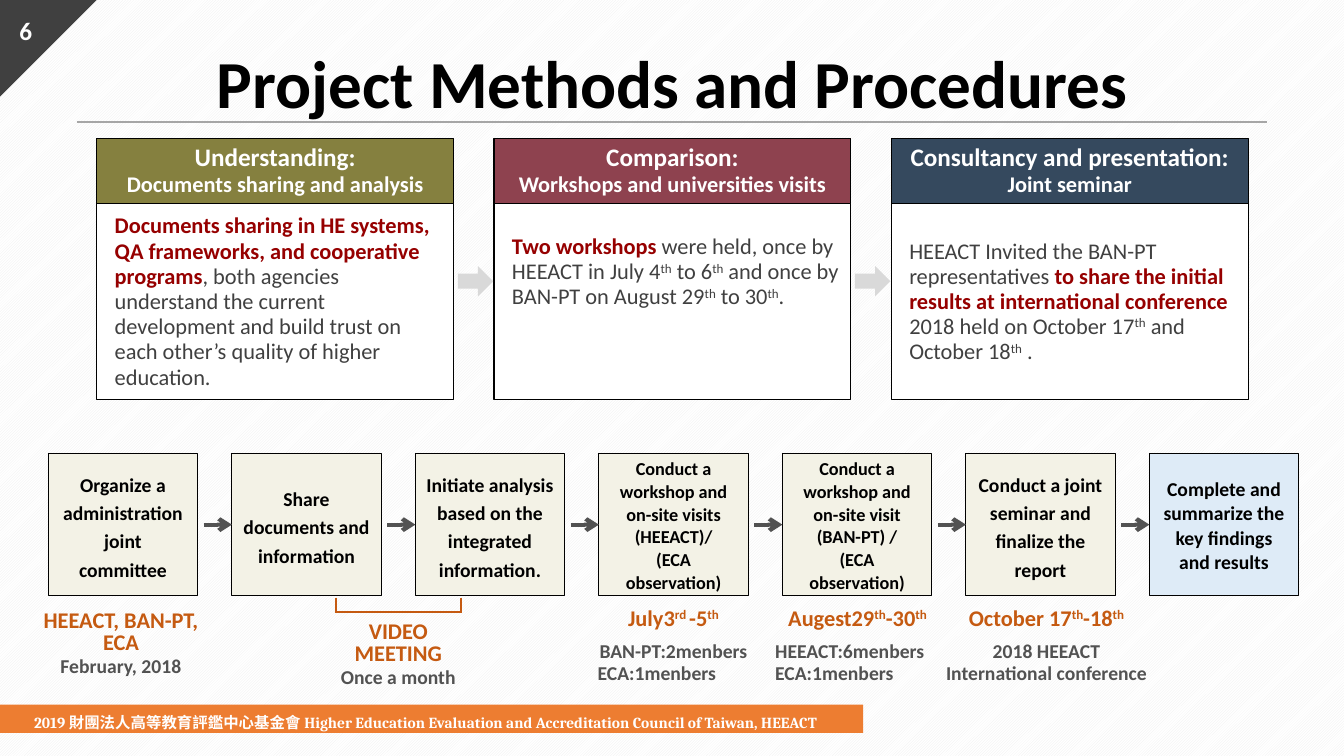
from lxml import etree
from pptx import Presentation
from pptx.dml.color import RGBColor as RGB
from pptx.enum.dml import MSO_PATTERN as PAT
from pptx.enum.shapes import MSO_CONNECTOR as CONN, MSO_SHAPE as SHAPE
from pptx.enum.text import MSO_ANCHOR as ANCHOR, PP_ALIGN as ALIGN
from pptx.oxml.ns import qn
from pptx.util import Inches, Pt

HUE = {
    "white": "FFFFFF", "black": "000000", "dark": "404040", "gray": "525252",
    "rule": "A6A6A6", "pale": "D9D9D9", "stripe": "EDEDED", "orange": "ED7D31",
    "rust": "C55A11", "red": "960000", "olive": "85803F", "wine": "8E424F",
    "navy": "35495E", "cream": "F3F2E6", "sky": "DEEBF7",
}


def box(kind, x, y, w, h, fill=None, edge=None):
    """Add a preset shape, or a text box when kind is None."""
    area = [Inches(v) for v in (x, y, w, h)]
    if kind is None:
        return slide.shapes.add_textbox(*area)
    shape = slide.shapes.add_shape(kind, *area)
    shape.shadow.inherit = False
    shape.fill.solid()
    shape.fill.fore_color.rgb = RGB.from_string(HUE[fill])
    if edge:
        shape.line.color.rgb = RGB.from_string(HUE[edge])
        shape.line.width = Pt(0.75)
    else:
        shape.line.fill.background()
    return shape


def write(shape, *paras, anchor=ANCHOR.MIDDLE, **look):
    """Write (text, format) pairs; *x* is strong red and ^x^ is raised."""
    frame = shape.text_frame
    frame.word_wrap = True
    frame.vertical_anchor = anchor
    for n, (text, own) in enumerate(paras):
        f = {"size": 16, "hue": "black", "bold": True, "font": "Calibri",
             "align": ALIGN.CENTER, **look, **own}
        para = frame.paragraphs[0] if n == 0 else frame.add_paragraph()
        para.alignment = f["align"]
        para.line_spacing = f.get("gap")
        para.space_before = Pt(f.get("before", 0))
        if "left" in f:
            para._p.get_or_add_pPr().set("marL", str(Inches(f["left"])))
        for i, part in enumerate(text.split("*")):
            for j, bit in enumerate(part.split("^")):
                if not bit:
                    continue
                run = para.add_run()
                run.text = bit
                run.font.name = f["font"]
                run.font.size = Pt(f["size"])
                run.font.bold = f["bold"] or i % 2 == 1
                run.font.color.rgb = RGB.from_string(HUE["red" if i % 2 else f["hue"]])
                props = run._r.get_or_add_rPr()
                if j % 2:
                    props.set("baseline", "30000")
                if "asian" in f:
                    etree.SubElement(props, qn("a:ea")).set("typeface", f["asian"])


deck = Presentation()
deck.slide_width, deck.slide_height = Inches(13.33), Inches(7.5)
slide = deck.slides.add_slide(deck.slide_layouts[5])

# Striped background
back = slide.background.fill
back.patterned()
back.pattern = PAT.LIGHT_UPWARD_DIAGONAL
back.fore_color.rgb = RGB.from_string(HUE["stripe"])
back.back_color.rgb = RGB.from_string(HUE["white"])

# Corner, page number and footer
box(SHAPE.RIGHT_TRIANGLE, 0, 0, 0.96, 0.96, "dark").rotation = 90
write(box(None, -0.02, 0.1, 0.55, 0.4), ("6", {}), size=18, hue="white")
box(SHAPE.RECTANGLE, -0.02, 6.99, 8.58, 0.28, "orange")
write(box(None, 0.24, 6.99, 8.23, 0.28),
      ("2019 財團法人高等教育評鑑中心基金會 Higher Education Evaluation "
       "and Accreditation Council of Taiwan, HEEACT", {}),
      size=11, hue="white", font="Cambria", asian="Noto Sans CJK SC",
      align=ALIGN.LEFT, gap=Pt(18))

# Title
title = slide.shapes.title
title.left, title.top = Inches(1.94), Inches(0.41)
title.width, title.height = Inches(9.46), Inches(0.81)
frame = title.text_frame
frame.margin_left = frame.margin_right = frame.margin_top = frame.margin_bottom = 0
write(title, ("Project Methods and Procedures", {}), size=48)

# Three phases
phases = [
    ("olive", "Understanding:", "Documents sharing and analysis",
     "*Documents sharing in HE systems, QA frameworks, and cooperative programs*, "
     "both agencies understand the current development and build trust on each "
     "other’s quality of higher education."),
    ("wine", "Comparison:", "Workshops and universities visits",
     "*Two workshops *were held, once by HEEACT in July 4^th^ to 6^th^ and once by "
     "BAN-PT on August 29^th^ to 30^th^."),
    ("navy", "Consultancy and presentation:", "Joint seminar",
     "HEEACT Invited the BAN-PT representatives *to share the initial results at "
     "international conference *2018 held on October 17^th^ and October 18^th^ ."),
]
for i, (hue, head, sub, body) in enumerate(phases):
    x = 0.96 + 3.94 * i
    write(box(SHAPE.RECTANGLE, x, 1.37, 3.54, 0.66, hue, "black"),
          (head, {"size": 18}), (sub, {}), hue="white", gap=Pt(18))
    card = box(SHAPE.RECTANGLE, x, 2.02, 3.54, 1.94, "white", "black")
    if hue == "wine":
        card.text_frame.margin_top = Inches(0.3)
    write(card, (body, {}), hue="dark", bold=False, align=ALIGN.LEFT, left=0.08,
          gap=Pt(18), anchor=ANCHOR.TOP if hue == "wine" else ANCHOR.MIDDLE)
    if i:
        box(SHAPE.RIGHT_ARROW, x - 0.36, 2.64, 0.35, 0.3, "pale")

# Seven steps: font size, line spacing, paragraphs
steps = [
    (14, 1.2, ["Organize a administration joint committee"]),
    (14, 1.2, ["Share documents and information"]),
    (14, 1.2, ["Initiate analysis based on the integrated information."]),
    (13, 1.04, ["Conduct a workshop and on-site visits (HEEACT)/", "(ECA observation)"]),
    (13, 1.04, ["Conduct a workshop and on-site visit", "(BAN-PT) /", "(ECA observation)"]),
    (14, 1.2, ["Conduct a joint seminar and finalize the report"]),
    (14, 1.04, ["Complete and summarize the key findings and results"]),
]
# Lines: x1, y1, x2, y2, colour, width, step the arrow points to
lines = [
    (0.76, 1.21, 12.57, 1.21, "rule", 1, None),
    (3.32, 6.07, 4.58, 6.07, "rust", 1.5, None),
    (3.33, 5.93, 3.33, 6.07, "rust", 1.5, None),
    (4.57, 5.93, 4.57, 6.07, "rust", 1.5, None),
]
for i, (size, gap, texts) in enumerate(steps):
    x = 0.48 + 1.82 * i
    step = box(SHAPE.RECTANGLE, x, 4.5, 1.48, 1.41,
               "sky" if i == len(steps) - 1 else "cream", "black")
    write(step, *[(text, {}) for text in texts], size=size, gap=gap)
    if i:
        lines.append((x - 0.28, 5.2, x, 5.2, "gray", 3, step))

# Rules, bracket and arrows
for x1, y1, x2, y2, hue, width, step in lines:
    line = slide.shapes.add_connector(CONN.STRAIGHT, *[Inches(v) for v in (x1, y1, x2, y2)])
    line.line.color.rgb = RGB.from_string(HUE[hue])
    line.line.width = Pt(width)
    if step is not None:
        line.begin_y = step.top + step.height // 2
        line.end_connect(step, 1)
        etree.SubElement(line.line._get_or_add_ln(), qn("a:tailEnd")).set("type", "arrow")
    etree.SubElement(line._element.spPr, qn("a:effectLst"))

# Dates and people under the steps
small = {"size": 14, "hue": "gray"}
spaced = {**small, "before": 6}
flush = {"align": ALIGN.LEFT}
notes = [
    (0.26, 5.95, 1.88, ANCHOR.MIDDLE,
     [("HEEACT, BAN-PT, ECA", {}), ("February, 2018", small)]),
    (3.19, 6.06, 1.52, ANCHOR.MIDDLE,
     [("VIDEO MEETING", {}), ("Once a month", small)]),
    (5.83, 5.99, 1.7, ANCHOR.TOP,
     [("July3^rd ^-5^th^", {}), ("BAN-PT:2menbers", spaced),
      ("ECA:1menbers", {**small, **flush})]),
    (7.59, 5.99, 1.83, ANCHOR.TOP,
     [("Augest29^th^-30^th^", {}), ("HEEACT:6menbers", {**spaced, **flush}),
      ("ECA:1menbers", {**small, **flush})]),
    (9.2, 5.99, 2.36, ANCHOR.TOP,
     [("October 17^th^-18^th^", {}), ("2018 HEEACT", spaced),
      ("International conference", small)]),
]
for x, y, w, anchor, paras in notes:
    write(box(None, x, y, w, 0.88), *paras, anchor=anchor, hue="rust", gap=Pt(16))

deck.save("out.pptx")
